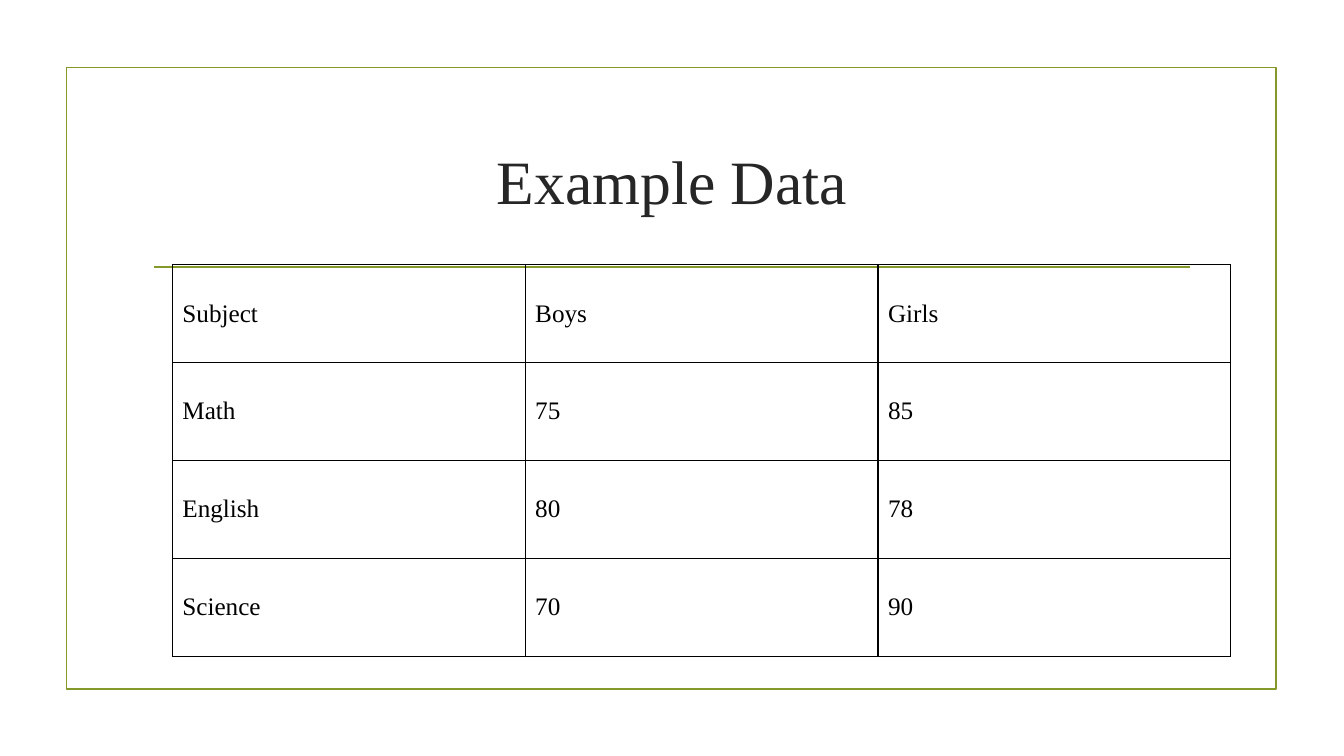
"""Build a slide with a framed title and a table of example marks."""
from lxml.etree import SubElement
from pptx import Presentation
from pptx.dml.color import RGBColor
from pptx.enum.shapes import MSO_CONNECTOR, MSO_SHAPE
from pptx.enum.text import MSO_ANCHOR, PP_ALIGN
from pptx.oxml import parse_xml
from pptx.oxml.ns import nsdecls, qn
from pptx.util import Pt

THEME = {
    "font": "Times New Roman",
    "title": {"size": Pt(44), "color": "262626"},
    "cell": {"size": Pt(18), "color": "000000"},
    "accent": "83992A",
    "border": "000000",
}
ROWS = [
    ("Subject", "Boys", "Girls"),
    ("Math", "75", "85"),
    ("English", "80", "78"),
    ("Science", "70", "90"),
]


def style_text(p, style):
    p.font.name = THEME["font"]
    p.font.size = style["size"]
    p.font.color.rgb = RGBColor.from_string(style["color"])


def add_borders(cell):
    tcPr = cell._tc.get_or_add_tcPr()
    for i, side in enumerate(("lnL", "lnR", "lnT", "lnB")):
        tcPr.insert(i, parse_xml(
            f'<a:{side} {nsdecls("a")} w="{Pt(1)}"><a:solidFill>'
            f'<a:srgbClr val="{THEME["border"]}"/></a:solidFill></a:{side}>'))


prs = Presentation()
prs.slide_width, prs.slide_height = Pt(960), Pt(540)
s = prs.slides.add_slide(prs.slide_layouts[5])

frame = s.shapes.add_shape(MSO_SHAPE.RECTANGLE, Pt(47.5), Pt(48.2), Pt(864), Pt(444.2))
frame.shadow.inherit = False
frame.fill.background()

rule = s.shapes.add_connector(MSO_CONNECTOR.STRAIGHT, Pt(110.2), Pt(190.8), Pt(850.3), Pt(190.8))
SubElement(rule._element.spPr, qn("a:effectLst"))

for sp in (frame, rule):
    sp.line.color.rgb = RGBColor.from_string(THEME["accent"])
    sp.line.width = Pt(1.25)

title = s.shapes.title
box = {"left": Pt(102.2), "top": Pt(77), "width": Pt(756), "height": Pt(103)}
for name, value in box.items():
    setattr(title, name, value)
tf = title.text_frame
tf.text = "Example Data"
tf.vertical_anchor = MSO_ANCHOR.MIDDLE
p = tf.paragraphs[0]
p.alignment = PP_ALIGN.CENTER
style_text(p, THEME["title"])

table = s.shapes.add_table(len(ROWS), len(ROWS[0]), Pt(123.1), Pt(188.9), Pt(756), Pt(280)).table
table.first_row = table.horz_banding = False
for r, values in enumerate(ROWS):
    for c, value in enumerate(values):
        cell = table.cell(r, c)
        cell.text = value
        cell.vertical_anchor = MSO_ANCHOR.MIDDLE
        cell.fill.background()
        add_borders(cell)
        style_text(cell.text_frame.paragraphs[0], THEME["cell"])

prs.save("out.pptx")
